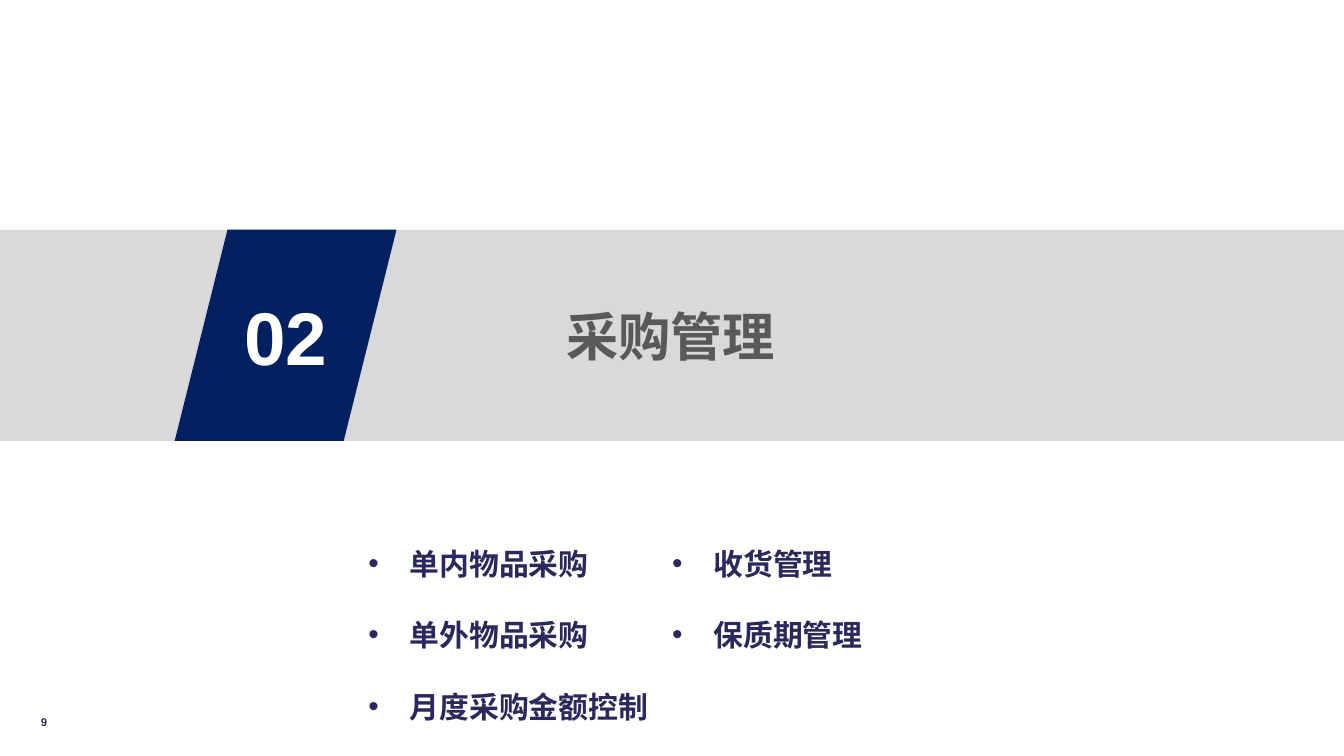
import pptx
import pptx.dml.color
import pptx.enum.lang
import pptx.enum.shapes
import pptx.enum.text
import pptx.oxml.ns
import pptx.util
from lxml import etree

RGBColor = pptx.dml.color.RGBColor
NAVY = RGBColor(0x00, 0x20, 0x60)
INK = RGBColor(0x2A, 0x29, 0x5C)
BAND = RGBColor(0xD9, 0xD9, 0xD9)
GREY = RGBColor(0x59, 0x59, 0x59)
WHITE = RGBColor(0xFF, 0xFF, 0xFF)

ALIGN = pptx.enum.text.PP_ALIGN
ANCHOR = pptx.enum.text.MSO_ANCHOR
AUTOSIZE = pptx.enum.text.MSO_AUTO_SIZE
Inches = pptx.util.Inches

WIDTH = 10
HEIGHT = WIDTH * 9 / 16
BAND_TOP, BAND_HEIGHT = 1.71, 1.57
INDENT = 0.31
TOPICS = ["单内物品采购", "单外物品采购", "月度采购金额控制", "收货管理", "保质期管理"]


def set_attrs(obj, values):
    for name, value in values.items():
        setattr(obj, name, value)


def place(sp, left, top, width, height):
    box = {"left": left, "top": top, "width": width, "height": height}
    set_attrs(sp, {name: Inches(value) for name, value in box.items()})


def write(p, text, size, color, align, font="Arial"):
    p.alignment = align
    r = p.add_run()
    r.text = text
    set_attrs(r.font, {
        "name": font, "size": pptx.util.Pt(size), "bold": True,
        "language_id": pptx.enum.lang.MSO_LANGUAGE_ID.SIMPLIFIED_CHINESE})
    r.font.color.rgb = color


def fill_panel(sp, fill, text, size, color):
    """Fill a shape and centre one line of text in it."""
    sp.fill.solid()
    sp.fill.fore_color.rgb = fill
    sp.line.fill.background()
    set_attrs(sp.text_frame, {"vertical_anchor": ANCHOR.MIDDLE,
                              "auto_size": AUTOSIZE.NONE, "word_wrap": True})
    write(sp.text_frame.paragraphs[0], text, size, color, ALIGN.CENTER)


def add_bullet(p):
    pPr = p._p.get_or_add_pPr()
    pPr.set("marL", str(Inches(INDENT)))
    pPr.set("indent", str(-Inches(INDENT)))
    for tag, name, value in (("a:buFont", "typeface", "Arial"),
                             ("a:buChar", "char", "•")):
        etree.SubElement(pPr, pptx.oxml.ns.qn(tag)).set(name, value)


def fill_topics(sp, topics):
    """Write the bulleted topics in two columns."""
    tf = sp.text_frame
    set_attrs(tf, {"word_wrap": True, "vertical_anchor": ANCHOR.TOP,
                   "auto_size": AUTOSIZE.SHAPE_TO_FIT_TEXT})
    tf._txBody.bodyPr.set("numCol", "2")
    for i, topic in enumerate(topics):
        p = tf.add_paragraph() if i else tf.paragraphs[0]
        add_bullet(p)
        set_attrs(p, {"line_spacing": 2.0, "space_before": pptx.util.Pt(0)})
        write(p, topic, 16, INK, ALIGN.LEFT, "Noto Sans CJK SC")


def add_page_number(s, number):
    sp = s.shapes.add_textbox(0, 0, 0, 0)
    place(sp, 0.09, 5.29, 0.26, 0.13)
    tf = sp.text_frame
    set_attrs(tf, {"margin_left": 0, "margin_top": 0, "margin_right": 0,
                   "margin_bottom": 0, "word_wrap": True,
                   "vertical_anchor": ANCHOR.BOTTOM})
    write(tf.paragraphs[0], number, 6, INK, ALIGN.RIGHT)


def main():
    prs = pptx.Presentation()
    prs.slide_width, prs.slide_height = Inches(WIDTH), Inches(HEIGHT)
    s = prs.slides.add_slide(prs.slide_layouts[1])

    # Section title across the full-width band
    title = s.shapes.title
    place(title, -0.02, BAND_TOP, WIDTH + 0.02, BAND_HEIGHT)
    fill_panel(title, BAND, "采购管理", 28, GREY)

    # Section number
    number = s.shapes.add_shape(
        pptx.enum.shapes.MSO_SHAPE.PARALLELOGRAM, 0, 0, 0, 0)
    place(number, 1.3, BAND_TOP, 1.65, BAND_HEIGHT)
    number.shadow.inherit = False
    fill_panel(number, NAVY, "02", 40, WHITE)

    # Topics of the section
    body = s.placeholders[1]
    place(body, 2.64, 3.74, 4.72, 1.63)
    fill_topics(body, TOPICS)

    # Page number
    add_page_number(s, "9")
    prs.save("out.pptx")


if __name__ == "__main__":
    main()
